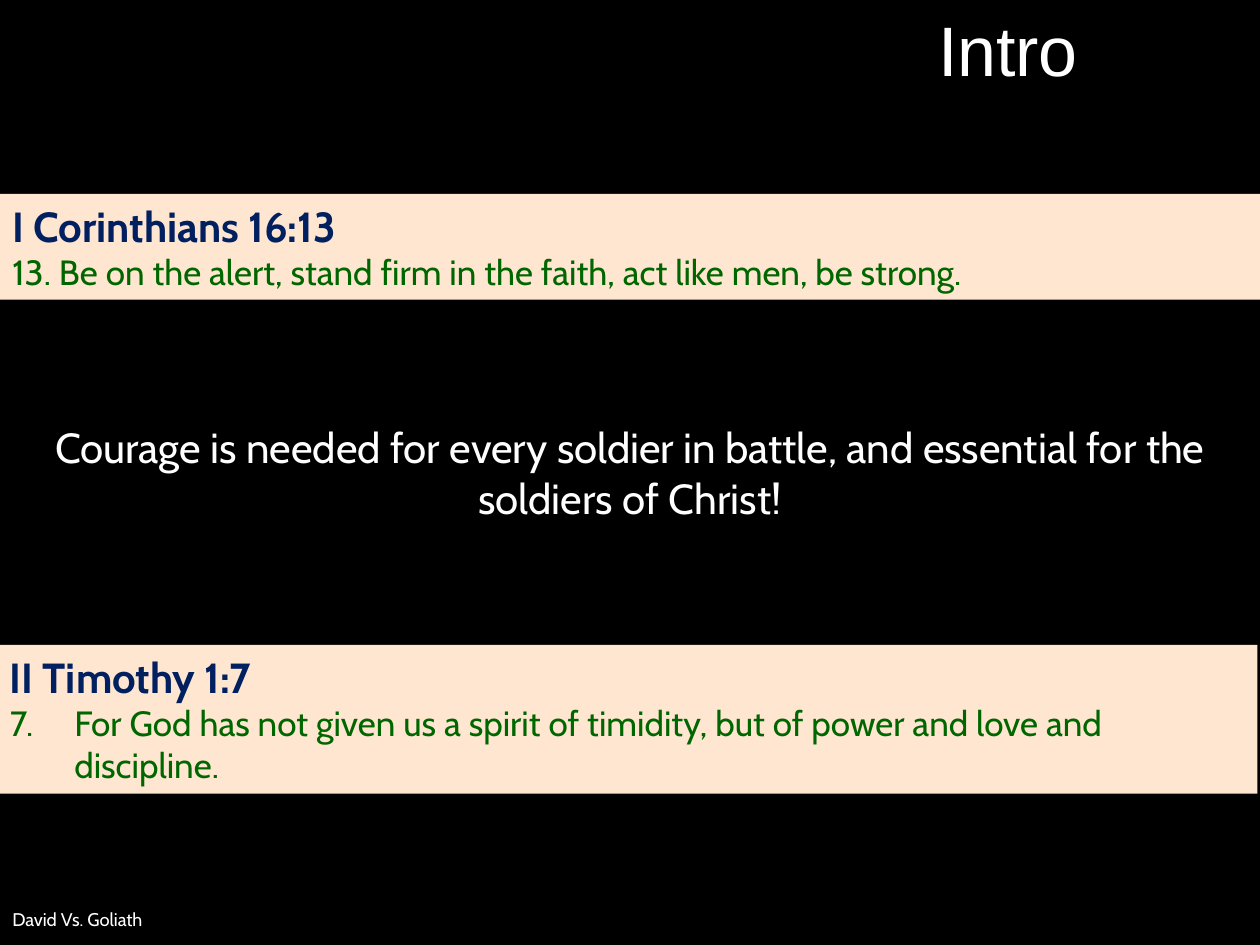
from pptx import Presentation
from pptx.dml.color import RGBColor
from pptx.enum.shapes import MSO_SHAPE
from pptx.enum.text import MSO_ANCHOR, MSO_AUTO_SIZE, PP_ALIGN
from pptx.util import Cm, Pt

RECTANGLE = MSO_SHAPE.RECTANGLE
TOP, MIDDLE = MSO_ANCHOR.TOP, MSO_ANCHOR.MIDDLE
LEFT, CENTER = PP_ALIGN.LEFT, PP_ALIGN.CENTER
GROW, FIXED = MSO_AUTO_SIZE.SHAPE_TO_FIT_TEXT, MSO_AUTO_SIZE.NONE

BLACK = RGBColor(0x00, 0x00, 0x00)
WHITE = RGBColor(0xFF, 0xFF, 0xFF)
PEACH = RGBColor(0xFF, 0xE6, 0xD1)
NAVY = RGBColor(0x00, 0x20, 0x60)
GREEN = RGBColor(0x00, 0x66, 0x00)

WIDTH, HEIGHT = 25.4, 19.05
TITLE = "Intro"
MESSAGE = ("Courage is needed for every soldier in battle, "
           "and essential for the soldiers of Christ!")
SERIES = "David Vs. Goliath"
# reference, verse, hanging indent of the verse, (left, top, width, height), all in cm
PASSAGES = [
    ("I Corinthians 16:13",
     "13. Be on the alert, stand firm in the faith, act like men, be strong.\u00a0",
     1.42, (0, 3.91, WIDTH, 2.13)),
    ("II Timothy 1:7",
     "7.\tFor God has not given us a spirit of timidity, "
     "but of power and love and discipline.\u00a0",
     1.3, (-0.05, 13, WIDTH, 3)),
]
REFERENCE_INDENT = 1.27


def cm_box(box):
    return [Cm(value) for value in box]


def set_frame(shape, anchor=TOP, auto_size=GROW):
    frame = shape.text_frame
    frame.word_wrap = True
    frame.vertical_anchor = anchor
    frame.auto_size = auto_size
    return frame


def format_paragraph(paragraph, size, color, font="Cabin", bold=False,
                     align=LEFT, hanging=0):
    paragraph.alignment = align
    if hanging:
        properties = paragraph._p.get_or_add_pPr()
        properties.set("marL", str(Cm(hanging)))
        properties.set("indent", str(-Cm(hanging)))
    for run in paragraph.runs:
        run.font.name = font
        run.font.size = Pt(size)
        run.font.bold = bold
        run.font.color.rgb = color


def add_line(slide, text, box, size, anchor=TOP, auto_size=GROW, align=LEFT):
    frame = set_frame(slide.shapes.add_textbox(*cm_box(box)), anchor, auto_size)
    frame.text = text
    format_paragraph(frame.paragraphs[0], size, WHITE, align=align)


def add_passage(slide, reference, verse, verse_indent, box):
    band = slide.shapes.add_shape(RECTANGLE, *cm_box(box))
    band.shadow.inherit = False
    band.fill.solid()
    band.fill.fore_color.rgb = PEACH
    band.line.fill.background()
    frame = set_frame(band)
    frame.text = f"{reference}\n{verse}"
    heading, body = frame.paragraphs
    format_paragraph(heading, 24, NAVY, bold=True, hanging=REFERENCE_INDENT)
    format_paragraph(body, 20, GREEN, hanging=verse_indent)


def main():
    presentation = Presentation()
    presentation.slide_width, presentation.slide_height = Cm(WIDTH), Cm(HEIGHT)
    slide = presentation.slides.add_slide(presentation.slide_layouts[5])
    slide.background.fill.solid()
    slide.background.fill.fore_color.rgb = BLACK

    title = slide.shapes.title
    title.left, title.top, title.width, title.height = cm_box((15.24, 0, 10.16, 1.96))
    frame = set_frame(title)
    frame.text = TITLE
    format_paragraph(frame.paragraphs[0], 40, WHITE, font="Arial", align=CENTER)

    add_line(slide, SERIES, (0, 18.03, 15.77, 1.02), 10.5, MIDDLE, FIXED)
    add_line(slide, MESSAGE, (0, 8.38, WIDTH, 2.31), 24, align=CENTER)
    for passage in PASSAGES:
        add_passage(slide, *passage)

    presentation.save("out.pptx")


if __name__ == "__main__":
    main()
